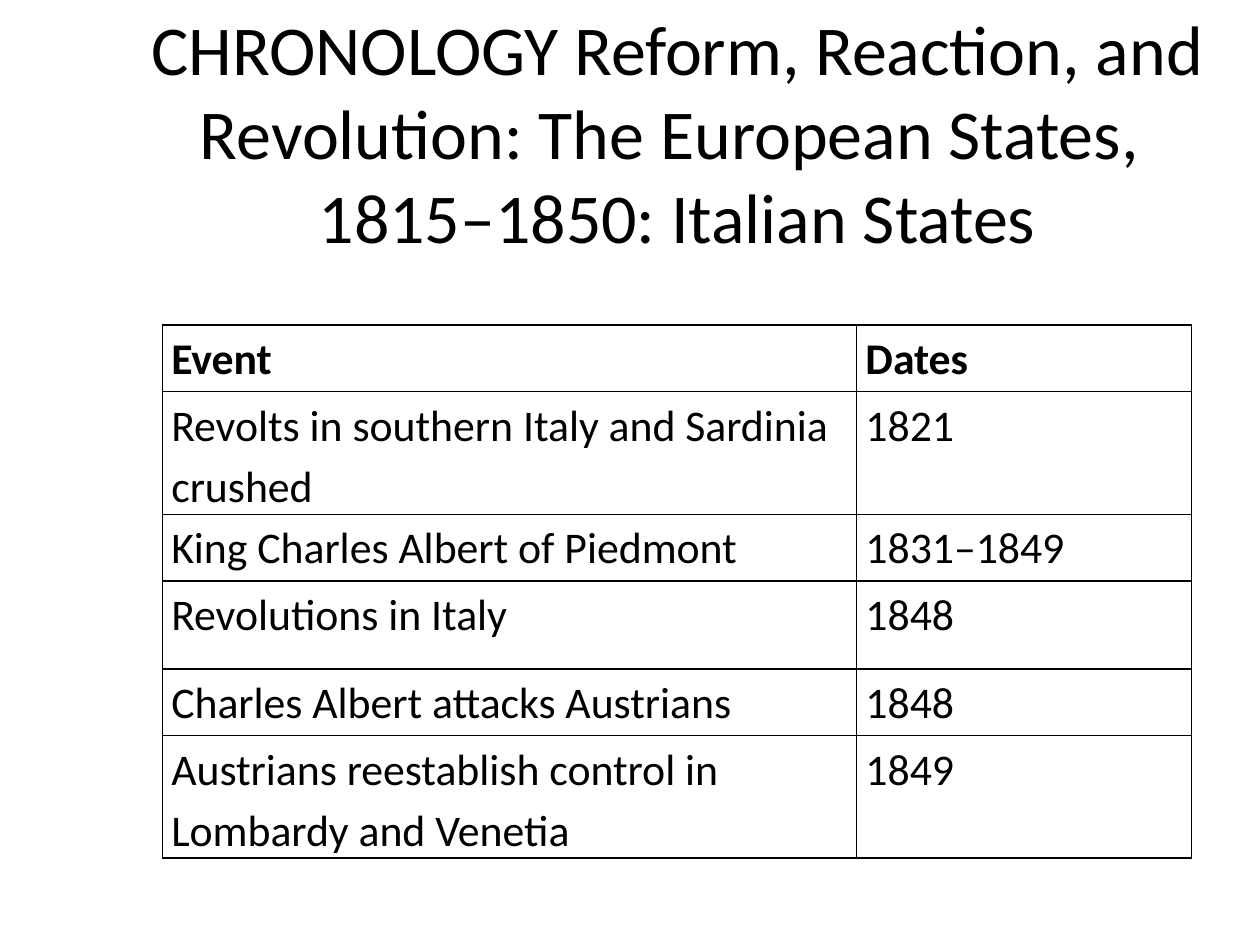
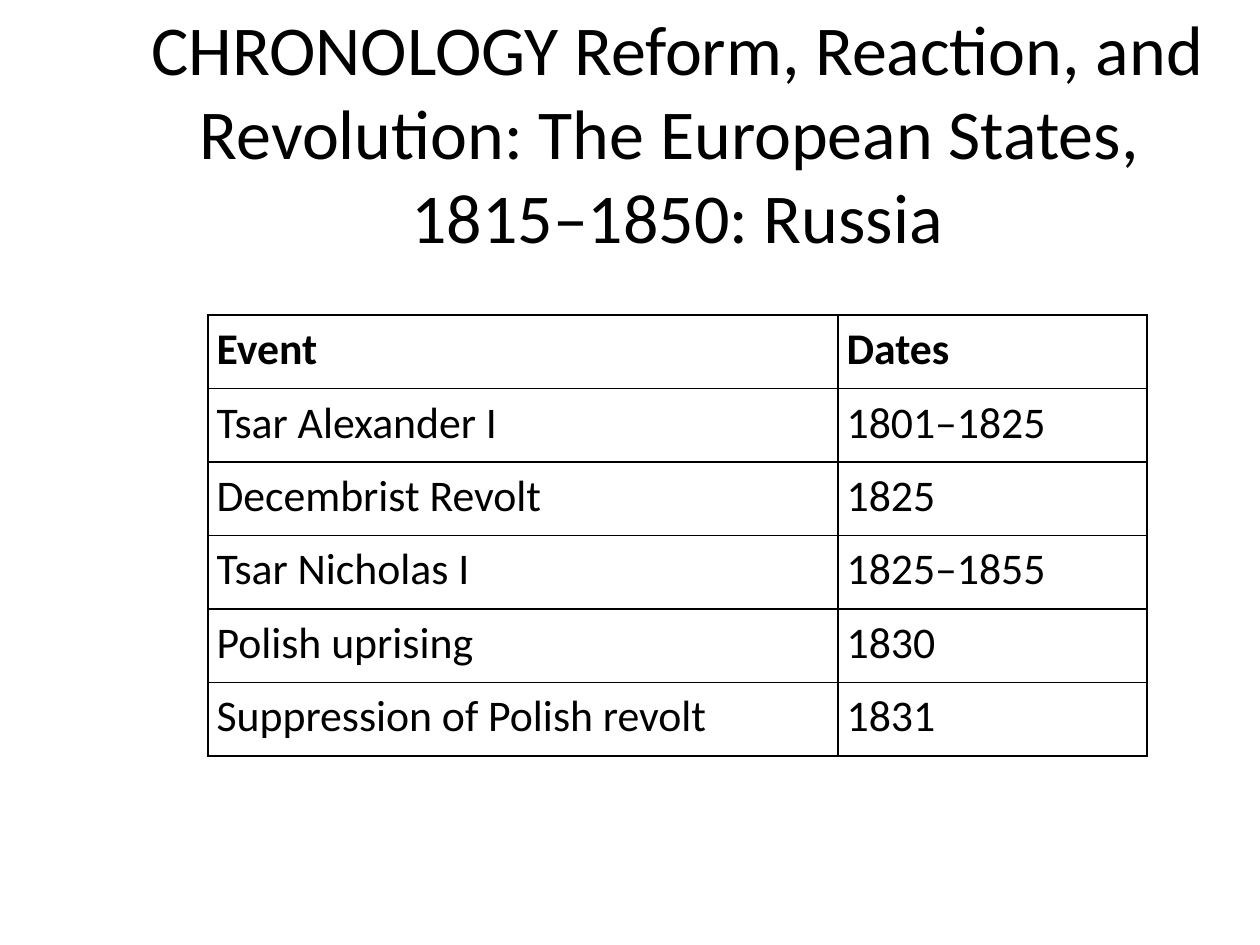
"""Builds two chronology slides, each with a title and a table of events."""
from dataclasses import dataclass

import lxml.etree
import pptx
import pptx.dml.color
import pptx.enum.text
import pptx.oxml.ns
import pptx.util

Pt = pptx.util.Pt
BLACK = pptx.dml.color.RGBColor(0, 0, 0)
FONT_NAME = "Calibri"
TITLE_START = "CHRONOLOGY Reform, Reaction, and Revolution: The European States, \v1815–1850: "
TITLE_LEFT, TITLE_WIDTH = 54, 666
TITLE_MIDDLE = 75
HEADER = ("Event", "Dates")


@dataclass(frozen=True)
class Chronology:
    region: str
    title_height: float
    left: float
    top: float
    column_widths: tuple[float, float]
    row_heights: tuple[float, ...]
    events: tuple[tuple[str, str], ...]


CHRONOLOGIES = (
    Chronology(
        "Italian States", 42, 92.9, 185.8, (396.7, 191.4),
        (38, 38, 38, 50.4, 38, 38),
        (
            ("Revolts in southern Italy and Sardinia crushed", "1821"),
            ("King Charles Albert of Piedmont", "1831–1849"),
            ("Revolutions in Italy", "1848"),
            ("Charles Albert attacks Austrians", "1848"),
            ("Austrians reestablish control in Lombardy and Venetia", "1849"),
        ),
    ),
    Chronology(
        "Russia", 30, 118.8, 180, (360, 176.6), (42,) * 6,
        (
            ("Tsar Alexander I", "1801–1825"),
            ("Decembrist Revolt", "1825"),
            ("Tsar Nicholas I", "1825–1855"),
            ("Polish uprising", "1830"),
            ("Suppression of Polish revolt", "1831"),
        ),
    ),
)


def write_text(text_frame, text: str, *, size: float, bold: bool = False,
               alignment=pptx.enum.text.PP_ALIGN.LEFT, line_spacing: float = 1.0) -> None:
    text_frame.word_wrap = True
    paragraph = text_frame.paragraphs[0]
    paragraph.text = text
    paragraph.alignment = alignment
    paragraph.line_spacing = line_spacing
    for run in paragraph.runs:
        run.font.name = FONT_NAME
        run.font.size = Pt(size)
        run.font.bold = bold
        run.font.color.rgb = BLACK


def add_borders(cell) -> None:
    properties = cell._tc.get_or_add_tcPr()
    qn = pptx.oxml.ns.qn
    for side in ("a:lnL", "a:lnR", "a:lnT", "a:lnB"):
        line = lxml.etree.SubElement(properties, qn(side), w=str(Pt(1)))
        fill = lxml.etree.SubElement(line, qn("a:solidFill"))
        lxml.etree.SubElement(fill, qn("a:srgbClr"), val=str(BLACK))


def add_title(slide, chronology: Chronology) -> None:
    title = slide.shapes.title
    title.left, title.width = Pt(TITLE_LEFT), Pt(TITLE_WIDTH)
    title.top = Pt(TITLE_MIDDLE - chronology.title_height / 2)
    title.height = Pt(chronology.title_height)
    title.text_frame.auto_size = pptx.enum.text.MSO_AUTO_SIZE.NONE
    title.text_frame.vertical_anchor = pptx.enum.text.MSO_ANCHOR.MIDDLE
    write_text(title.text_frame, TITLE_START + chronology.region, size=40,
               alignment=pptx.enum.text.PP_ALIGN.CENTER)


def add_events_table(slide, chronology: Chronology) -> None:
    rows = (HEADER, *chronology.events)
    table = slide.shapes.add_table(
        len(rows), len(HEADER), Pt(chronology.left), Pt(chronology.top),
        Pt(sum(chronology.column_widths)), Pt(sum(chronology.row_heights)),
    ).table
    table.first_row = table.horz_banding = False
    for column, width in zip(table.columns, chronology.column_widths):
        column.width = Pt(width)
    for row, height in zip(table.rows, chronology.row_heights):
        row.height = Pt(height)
    for row_index, texts in enumerate(rows):
        for column_index, text in enumerate(texts):
            cell = table.cell(row_index, column_index)
            cell.margin_left = cell.margin_right = Pt(5)
            cell.margin_top = cell.margin_bottom = 0
            add_borders(cell)
            cell.fill.background()
            write_text(cell.text_frame, text, size=25, bold=row_index == 0, line_spacing=1.15)


def main() -> None:
    presentation = pptx.Presentation()
    presentation.slide_width, presentation.slide_height = Pt(720), Pt(540)
    title_only = presentation.slide_layouts.get_by_name("Title Only")
    for chronology in CHRONOLOGIES:
        slide = presentation.slides.add_slide(title_only)
        add_title(slide, chronology)
        add_events_table(slide, chronology)
    presentation.save("out.pptx")


if __name__ == "__main__":
    main()
